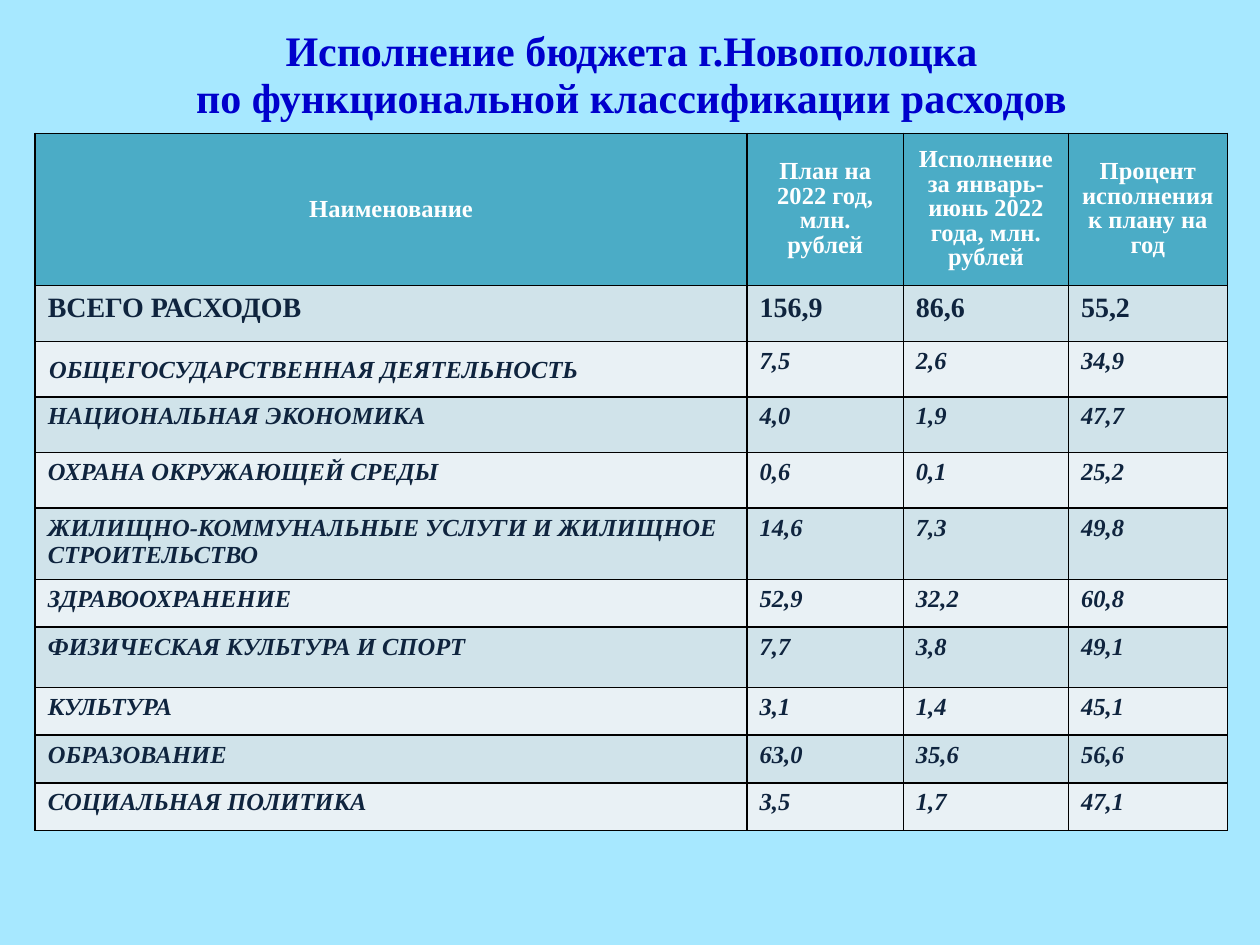
from dataclasses import dataclass

from lxml.etree import SubElement
from pptx import Presentation
from pptx.dml.color import RGBColor
from pptx.enum.text import MSO_ANCHOR, PP_ALIGN
from pptx.oxml.ns import qn
from pptx.util import Cm, Pt


@dataclass(frozen=True)
class Theme:
    font: str = "Times New Roman"
    background: str = "A7E8FF"
    title: str = "0000CC"
    header_fill: str = "4BACC6"
    header_text: str = "FFFFFF"
    body_text: str = "0F243E"
    bands: tuple = ("D0E3EA", "E9F1F5")
    border: str = "000000"
    title_size: int = 24
    total_size: int = 16
    body_size: int = 14
    border_width: int = 1


class BudgetSlide:
    def __init__(self, presentation, theme):
        self.theme = theme
        self.slide = presentation.slides.add_slide(presentation.slide_layouts[6])
        fill = self.slide.background.fill
        fill.solid()
        fill.fore_color.rgb = RGBColor.from_string(theme.background)

    def set_text(self, text_frame, text, color, size, italic=False, **paragraph_format):
        paragraph = text_frame.paragraphs[0]
        paragraph.text = text
        for name, value in paragraph_format.items():
            setattr(paragraph, name, value)
        font_format = {"name": self.theme.font, "size": Pt(size), "bold": True, "italic": italic}
        for run in paragraph.runs:
            for name, value in font_format.items():
                setattr(run.font, name, value)
            run.font.color.rgb = RGBColor.from_string(color)

    def add_title(self, text, left, top, width, height):
        shape = self.slide.shapes.add_textbox(Cm(left), Cm(top), Cm(width), Cm(height))
        text_frame = shape.text_frame
        text_frame.word_wrap = True
        text_frame.vertical_anchor = MSO_ANCHOR.MIDDLE
        self.set_text(text_frame, text, self.theme.title, self.theme.title_size,
                      alignment=PP_ALIGN.CENTER, line_spacing=Pt(27))

    def add_borders(self, cell):
        properties = cell._tc.get_or_add_tcPr()
        for position, side in enumerate(("a:lnL", "a:lnR", "a:lnT", "a:lnB")):
            line = SubElement(properties, qn(side), w=str(Pt(self.theme.border_width)))
            solid = SubElement(line, qn("a:solidFill"))
            SubElement(solid, qn("a:srgbClr"), val=self.theme.border)
            properties.insert(position, line)

    def fill_cell(self, cell, text, row_index, column_index):
        theme = self.theme
        is_header = row_index == 0
        fill = theme.header_fill if is_header else theme.bands[(row_index - 1) % 2]
        cell.fill.solid()
        cell.fill.fore_color.rgb = RGBColor.from_string(fill)
        self.add_borders(cell)
        if is_header:
            cell.vertical_anchor = MSO_ANCHOR.MIDDLE
            spacing = {"line_spacing": Pt(14)} if column_index else {}
            self.set_text(cell.text_frame, text, theme.header_text, theme.body_size,
                          alignment=PP_ALIGN.CENTER, **spacing)
        else:
            is_total = row_index == 1
            size = theme.total_size if is_total else theme.body_size
            self.set_text(cell.text_frame, text, theme.body_text, size, italic=not is_total)

    def add_table(self, rows, left, top, column_widths, row_heights):
        shape = self.slide.shapes.add_table(
            len(rows), len(column_widths), Cm(left), Cm(top),
            Cm(sum(column_widths)), Cm(sum(row_heights)))
        table = shape.table
        for column, width in zip(table.columns, column_widths):
            column.width = Cm(width)
        for row, height in zip(table.rows, row_heights):
            row.height = Cm(height)
        for row_index, values in enumerate(rows):
            for column_index, text in enumerate(values):
                self.fill_cell(table.cell(row_index, column_index), text, row_index, column_index)
        return table


ROWS = [
    ("Наименование", "План на 2022 год, млн. рублей",
     "Исполнение за январь-июнь 2022 года, млн. рублей", "Процент исполнения к плану на год"),
    ("ВСЕГО РАСХОДОВ", "156,9", "86,6", "55,2"),
    ("ОБЩЕГОСУДАРСТВЕННАЯ ДЕЯТЕЛЬНОСТЬ", "7,5", "2,6", "34,9"),
    ("НАЦИОНАЛЬНАЯ ЭКОНОМИКА", "4,0", "1,9", "47,7"),
    ("ОХРАНА ОКРУЖАЮЩЕЙ СРЕДЫ", "0,6", "0,1", "25,2"),
    ("ЖИЛИЩНО-КОММУНАЛЬНЫЕ УСЛУГИ И ЖИЛИЩНОЕ СТРОИТЕЛЬСТВО", "14,6", "7,3", "49,8"),
    ("ЗДРАВООХРАНЕНИЕ", "52,9", "32,2", "60,8"),
    ("ФИЗИЧЕСКАЯ КУЛЬТУРА И СПОРТ", "7,7", "3,8", "49,1"),
    ("КУЛЬТУРА", "3,1", "1,4", "45,1"),
    ("ОБРАЗОВАНИЕ", "63,0", "35,6", "56,6"),
    ("СОЦИАЛЬНАЯ ПОЛИТИКА", "3,5", "1,7", "47,1"),
]


def main():
    presentation = Presentation()
    presentation.slide_width = Cm(25.4)
    presentation.slide_height = Cm(19.05)
    budget = BudgetSlide(presentation, Theme())
    budget.add_title("Исполнение бюджета г.Новополоцка\vпо функциональной классификации расходов",
                     1.3, 0.33, 22.86, 2.36)
    table = budget.add_table(ROWS, 0.71, 2.69, (14.35, 3.15, 3.33, 3.2),
                             [3.07] + [1.12] * 5 + [0.96, 1.22] + [0.96] * 3)
    state_activity = table.cell(2, 0)
    cell_format = {"vertical_anchor": MSO_ANCHOR.MIDDLE, "margin_left": Cm(0.28),
                   "margin_right": Cm(0.03), "margin_top": Cm(0.03), "margin_bottom": Cm(0)}
    for name, value in cell_format.items():
        setattr(state_activity, name, value)
    presentation.save("out.pptx")


if __name__ == "__main__":
    main()
